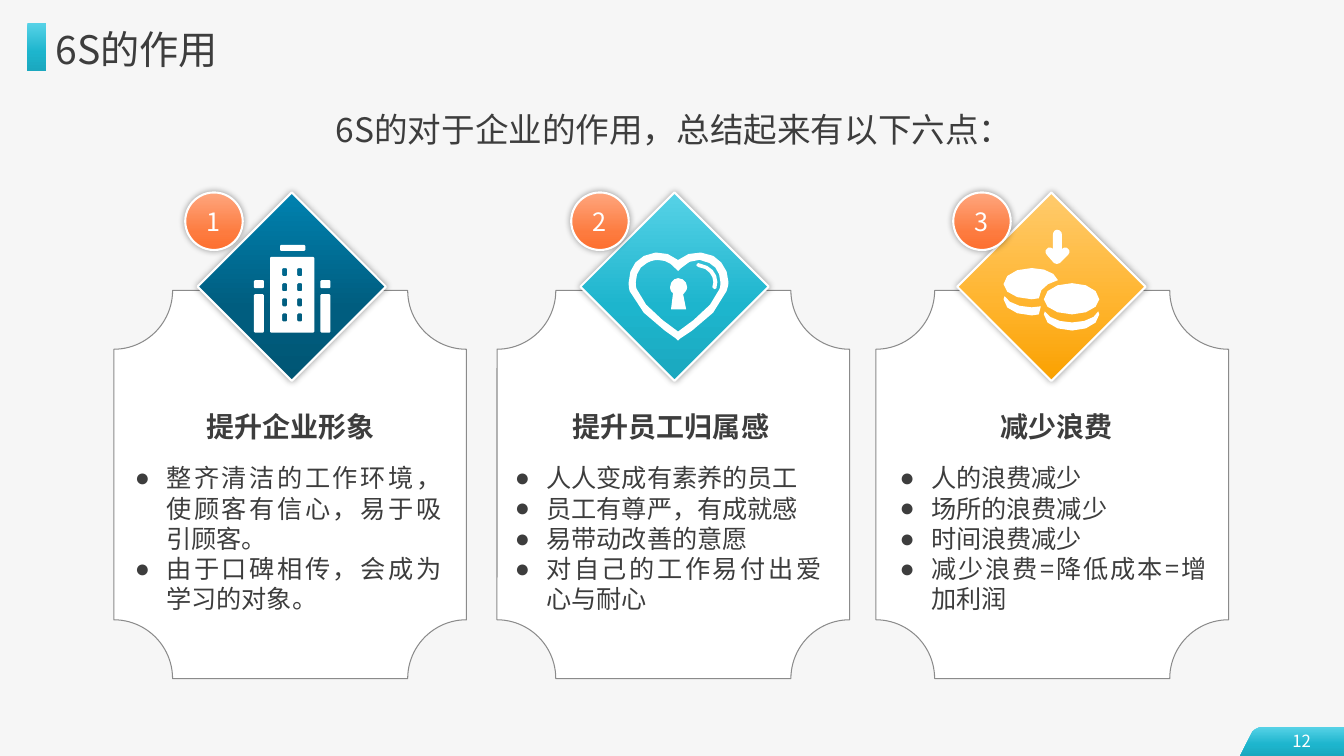
import copy

import pptx
import pptx.dml.color
import pptx.enum.shapes
import pptx.enum.text
import pptx.oxml
import pptx.oxml.ns
import pptx.util
from pptx.util import Cm, Pt

SHAPE = pptx.enum.shapes.MSO_SHAPE
ALIGN = pptx.enum.text.PP_ALIGN
ANCHOR = pptx.enum.text.MSO_ANCHOR
RGB = pptx.dml.color.RGBColor.from_string
FONT = "Noto Sans CJK SC"
COLORS = {"background": "F6F6F6", "text": "3D3D3D", "white": "FFFFFF", "border": "8B8B8B"}
GRADIENTS = {
    "teal": {0: "57D2E7", 0.6: "1DB5CD", 1: "1BA8BF"},
    "navy": {0: "0082B0", 0.61: "005D7F", 1: "005674"},
    "amber": {0: "FFCB6D", 0.57: "FFB530", 1: "FAA100"},
    "orange": {0: "FEA67E", 0.7: "FD7B3F", 1: "FD6F2F"},
}


def write(shape, lines, size, color="text", align=ALIGN.LEFT, bold=False, inset=0,
          anchor=ANCHOR.TOP, bullet=None):
    """Fill a shape with paragraphs; inset is (side, top) in cm or 0."""
    frame = shape.text_frame
    side, top = inset or (0, 0)
    layout = {"word_wrap": True, "auto_size": pptx.enum.text.MSO_AUTO_SIZE.NONE,
              "vertical_anchor": anchor, "margin_left": Cm(side), "margin_right": Cm(side),
              "margin_top": Cm(top), "margin_bottom": Cm(top)}
    for name, value in layout.items():
        setattr(frame, name, value)
    for number, line in enumerate(lines):
        paragraph = frame.add_paragraph() if number else frame.paragraphs[0]
        properties = paragraph._p.get_or_add_pPr()
        indent = Cm(0.79) if bullet else 0
        properties.set("marL", str(indent))
        properties.set("indent", str(-indent))
        mark = pptx.oxml.ns.qn("a:buChar" if bullet else "a:buNone")
        mark = properties.makeelement(mark, {"char": bullet} if bullet else {})
        properties.append(mark)
        paragraph.alignment = align
        paragraph.space_before = Pt(0)
        run = paragraph.add_run()
        run.text = line
        for name, value in {"name": FONT, "size": Pt(size), "bold": bold}.items():
            setattr(run.font, name, value)
        run.font.color.rgb = RGB(COLORS[color])
        east_asian = pptx.oxml.ns.qn("a:ea")
        run.font._element.append(run.font._element.makeelement(east_asian, {"typeface": FONT}))


def paint(shape, fill, line=None, width=1.5, glow=False):
    """Give a shape a plain or three-stop fill, an optional outline and soft shadow."""
    shape.shadow.inherit = False
    if fill in GRADIENTS:
        shape.fill.gradient()
        shape.fill.gradient_angle = 270
        stops = shape.element.spPr.find(".//" + pptx.oxml.ns.qn("a:gsLst"))
        stops.append(copy.deepcopy(stops[0]))
        for stop, (position, color) in zip(shape.fill.gradient_stops, GRADIENTS[fill].items()):
            stop.position = position
            stop.color.rgb = RGB(color)
    else:
        shape.fill.solid()
        shape.fill.fore_color.rgb = RGB(COLORS[fill])
    if line:
        shape.line.color.rgb = RGB(COLORS[line])
        shape.line.width = Pt(width)
    else:
        shape.line.fill.background()
    if glow:
        effects = shape.element.spPr.find(pptx.oxml.ns.qn("a:effectLst"))
        effects.append(pptx.oxml.parse_xml(
            '<a:outerShdw xmlns:a="http://schemas.openxmlformats.org/drawingml/2006/main"'
            ' blurRad="63500" dist="0" algn="ctr" rotWithShape="0">'
            '<a:srgbClr val="000000"><a:alpha val="40000"/></a:srgbClr></a:outerShdw>'))


presentation = pptx.Presentation()
presentation.slide_width, presentation.slide_height = Cm(33.88), Cm(19.05)
slide = presentation.slides.add_slide(presentation.slide_layouts[4])
shapes = slide.shapes
slide.background.fill.solid()
slide.background.fill.fore_color.rgb = RGB(COLORS["background"])

# Title and lead sentence
title, *lists, lead = slide.placeholders
for heading, box, text, size, align in (
        (title, (1.4, 0.63, 17.58, 1.2), "6S的作用", 28, ALIGN.LEFT),
        (lead, (8.2, 2.74, 17.58, 1.02), "6S的对于企业的作用，总结起来有以下六点：", 24, ALIGN.CENTER)):
    heading.left, heading.top, heading.width, heading.height = map(Cm, box)
    write(heading, [text], size, align=align, anchor=ANCHOR.MIDDLE)
paint(shapes.add_shape(SHAPE.RECTANGLE, Cm(0.69), Cm(0.58), Cm(0.48), Cm(1.2)), "teal")

# Cards: left edges of plaque, diamond, badge, heading and list
cards = [
    ((2.87, 4.98, 4.67, 4.11, 3.15), "navy", "提升企业形象",
     ["整齐清洁的工作环境，使顾客有信心，易于吸引顾客。", "由于口碑相传，会成为学习的对象。"]),
    ((12.53, 14.63, 14.4, 13.69, 12.73), "teal", "提升员工归属感",
     ["人人变成有素养的员工", "员工有尊严，有成就感", "易带动改善的意愿", "对自己的工作易付出爱心与耐心"]),
    ((22.08, 24.13, 24.03, 23.42, 22.43), "amber", "减少浪费",
     ["人的浪费减少", "场所的浪费减少", "时间浪费减少", "减少浪费=降低成本=增加利润"]),
]
for number, (card, points) in enumerate(zip(cards, lists), 1):
    (plaque_x, diamond_x, badge_x, name_x, points_x), color, name, lines = card
    plaque = shapes.add_shape(SHAPE.PLAQUE, Cm(plaque_x), Cm(7.32), Cm(8.89), Cm(9.78))
    paint(plaque, "white", "border", 0.75)
    diamond = shapes.add_shape(SHAPE.DIAMOND, Cm(diamond_x), Cm(4.85), Cm(4.75), Cm(4.75))
    paint(diamond, color, "white", glow=True)
    badge = shapes.add_shape(SHAPE.OVAL, Cm(badge_x), Cm(4.85), Cm(1.45), Cm(1.45))
    paint(badge, "orange", "white", glow=True)
    write(badge, [str(number)], 18, "white", ALIGN.CENTER, anchor=ANCHOR.MIDDLE)
    card_name = shapes.add_textbox(Cm(name_x), Cm(10.19), Cm(6.45), Cm(1.12))
    write(card_name, [name], 20, align=ALIGN.CENTER, bold=True, inset=(0.25, 0.13))
    points.left, points.top = Cm(points_x), Cm(11.53)
    points.width, points.height = Cm(8.23), Cm(4.11)
    write(points, lines, 18, align=ALIGN.JUSTIFY, inset=(0.25, 0.13), bullet="●")
    points.element.getparent().append(points.element)

# Outlines in hundredths of an inch: a pair is a corner, six numbers a curve
building = []
windows = [(x, 75 + 15 * floor, 5, 8) for x in (84, 99) for floor in range(4)]
wings = [(x, y, 10, height) for x in (56, 122) for y, height in ((87, 8), (101, 38))]
for x, y, width, height in [(72, 64, 44, 75), (82, 52, 25, 6)] + wings + windows:
    right, bottom = x + width, y + height
    building.append([(x + 1, y), (right - 1, y), (right, y + 1), (right, bottom - 1),
                     (right - 1, bottom), (x + 1, bottom), (x, bottom - 1), (x, y + 1)])
heart = [
    [(132, 63), (120, 57, 106, 59, 97, 67), (88, 59, 74, 57, 63, 63), (53, 68, 48, 78, 48, 89),
     (48, 92, 48, 95, 49, 98), (54, 119, 94, 144, 95, 145), (97, 147), (99, 145),
     (101, 144, 141, 119, 145, 98), (146, 95, 147, 92, 147, 89), (147, 78, 141, 68, 132, 63)],
    [(138, 96), (135, 110, 109, 130, 97, 138), (85, 130, 59, 110, 56, 96),
     (55, 94, 55, 91, 55, 89), (55, 81, 59, 73, 66, 70), (70, 68, 73, 67, 77, 67),
     (84, 67, 90, 70, 94, 75), (97, 78), (100, 75), (107, 67, 119, 64, 128, 70),
     (135, 73, 139, 81, 139, 89), (139, 91, 139, 94, 138, 96)],
    [(136, 89), (135, 95), (133, 96), (131, 94), (132, 89), (132, 84, 129, 79, 124, 76),
     (117, 74), (115, 72), (117, 70), (126, 73), (132, 76, 136, 82, 136, 89)],
    [(106, 94), (106, 97, 104, 99, 102, 101), (105, 116), (90, 116), (92, 100),
     (90, 99, 89, 96, 89, 94), (89, 89, 93, 85, 97, 85), (102, 85, 106, 89, 106, 94)],
]
coins = [
    [(87, 118), (90, 124, 101, 129, 114, 129), (127, 129, 138, 124, 140, 118), (141, 121),
     (141, 130, 129, 137, 114, 137), (98, 137, 86, 130, 86, 121)],
    [(47, 103), (50, 109, 61, 114, 74, 114), (83, 113), (81, 121), (74, 122),
     (58, 122, 46, 115, 46, 106)],
    [(114, 90), (129, 90, 141, 97, 141, 106), (141, 114, 129, 121, 114, 121),
     (98, 121, 86, 114, 86, 106), (86, 97, 98, 90, 114, 90)],
    [(74, 75), (87, 75, 98, 80, 100, 87), (89, 90, 81, 96, 81, 105), (74, 106),
     (58, 106, 46, 99, 46, 91), (46, 82, 58, 75, 74, 75)],
    [(99, 37), (102, 37, 104, 39, 104, 42), (104, 56), (106, 54, 109, 54, 110, 56),
     (112, 57, 112, 60, 110, 62), (102, 70), (99, 71), (96, 70), (89, 62),
     (87, 60, 87, 57, 89, 56), (90, 54, 93, 54, 95, 56), (95, 42), (95, 39, 97, 37, 99, 37)],
]
page_tab = [[(1334, 721), (1253, 721), (1249, 721, 1246, 723, 1243, 726), (1231, 750), (1334, 750)]]
unit = Cm(2.54) / 100
steps = 3
for left, top, contours, color in ((4.98, 4.85, building, "white"), (14.63, 4.85, heart, "white"),
                                   (24.13, 4.85, coins, "white"), (0, 0, page_tab, "teal")):
    outline = None
    for contour in contours:
        points = [contour[0]]
        for segment in contour[1:]:
            if len(segment) == 2:
                points.append(segment)
                continue
            controls = [points[-1], segment[:2], segment[2:4], segment[4:]]
            for t in (step / steps for step in range(1, steps + 1)):
                weights = ((1 - t) ** 3, 3 * t * (1 - t) ** 2, 3 * t * t * (1 - t), t ** 3)
                points.append([sum(w * p[axis] for w, p in zip(weights, controls)) for axis in (0, 1)])
        points = [(Cm(left) + x * unit, Cm(top) + y * unit) for x, y in points]
        if outline:
            outline.move_to(*points[0])
        else:
            outline = shapes.build_freeform(*points[0])
        outline.add_line_segments(points[1:], close=True)
    paint(outline.convert_to_shape(), color)

page_number = shapes.add_textbox(Cm(32.28), Cm(18.29), Cm(1.07), Cm(0.76))
write(page_number, ["12"], 12, "white", ALIGN.CENTER, anchor=ANCHOR.MIDDLE)

presentation.save("out.pptx")
